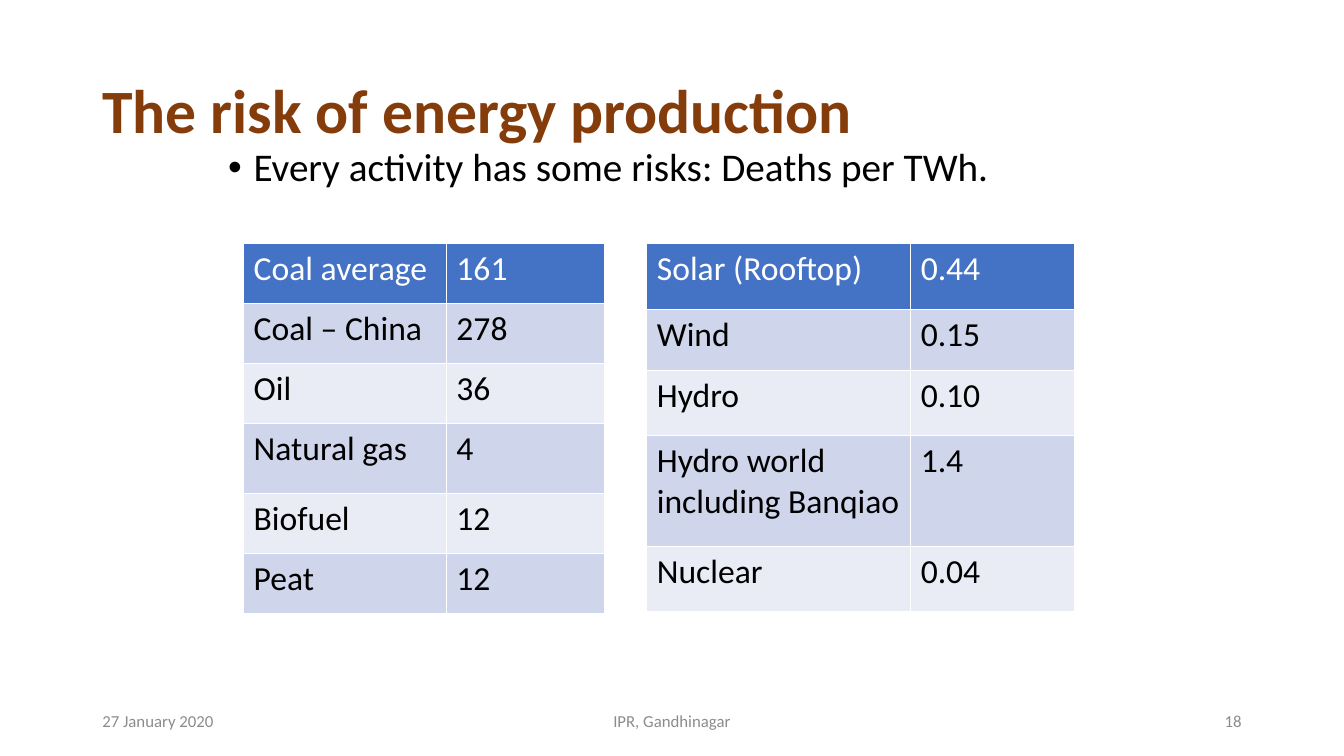
from dataclasses import dataclass

from lxml import etree
from pptx import Presentation
from pptx.dml.color import RGBColor
from pptx.enum.text import MSO_ANCHOR, PP_ALIGN
from pptx.oxml.ns import qn
from pptx.slide import Slide
from pptx.table import _Cell
from pptx.text.text import TextFrame, _Paragraph
from pptx.util import Cm, Pt

LEFT, CENTER, RIGHT = PP_ALIGN.LEFT, PP_ALIGN.CENTER, PP_ALIGN.RIGHT
TOP, MIDDLE = MSO_ANCHOR.TOP, MSO_ANCHOR.MIDDLE


@dataclass(frozen=True)
class Theme:
    font: str = "Calibri"
    title: str = "843C0B"
    text: str = "000000"
    footer: str = "8C8C8C"
    header_text: str = "FFFFFF"
    header_fill: str = "4472C4"
    bands: tuple[str, str] = ("CFD5EA", "E9EBF5")
    border: str = "FFFFFF"
    border_pt: float = 1
    title_pt: float = 44
    body_pt: float = 28
    table_pt: float = 24
    footer_pt: float = 12


THEME = Theme()


@dataclass(frozen=True)
class Box:
    """Place on the slide, in centimetres."""
    left: float
    top: float
    width: float
    height: float


@dataclass(frozen=True)
class FooterItem:
    text: str
    left: float
    width: float
    align: PP_ALIGN


@dataclass(frozen=True)
class RiskTable:
    left: float
    column_widths: tuple[float, ...]
    row_heights: tuple[float, ...]
    rows: tuple[tuple[str, str], ...]


TITLE_BOX = Box(2.33, 1.02, 29.21, 3.68)
BODY_BOX = Box(5.5, 3.6, 22.86, 13.41)
FOOTER_TOP, FOOTER_HEIGHT = 17.65, 1.01
TABLE_TOP = 6.14

FOOTER = (
    FooterItem("27 January 2020", 2.33, 7.62, LEFT),
    FooterItem("IPR, Gandhinagar", 11.22, 11.43, CENTER),
    FooterItem("18", 23.92, 7.62, RIGHT),
)

FUELS = RiskTable(
    6.14, (5.11, 3.99), (1.51, 1.51, 1.51, 1.77, 1.51, 1.51),
    (("Coal average", "161"), ("Coal – China", "278"), ("Oil", "36"),
     ("Natural gas", "4"), ("Biofuel", "12"), ("Peat", "12")),
)
LOW_CARBON = RiskTable(
    16.3, (6.65, 4.14), (1.65, 1.54, 1.65, 2.79, 1.65),
    (("Solar (Rooftop)", "0.44"), ("Wind", "0.15"), ("Hydro", "0.10"),
     ("Hydro world including Banqiao", "1.4"), ("Nuclear", "0.04")),
)


def write(frame: TextFrame, text: str, *, size: float, color: str,
          bold: bool = False, align: PP_ALIGN = LEFT,
          line_spacing: float = 1.0, space_before: float = 0) -> _Paragraph:
    """Put one formatted paragraph into a text frame."""
    paragraph = frame.paragraphs[0]
    paragraph.alignment = align
    paragraph.line_spacing = line_spacing
    paragraph.space_before = Pt(space_before)
    run = paragraph.add_run()
    run.text = text
    run.font.name = THEME.font
    run.font.size = Pt(size)
    run.font.bold = bold
    run.font.color.rgb = RGBColor.from_string(color)
    return paragraph


def add_frame(slide: Slide, box: Box, anchor: MSO_ANCHOR) -> TextFrame:
    frame = slide.shapes.add_textbox(
        Cm(box.left), Cm(box.top), Cm(box.width), Cm(box.height)).text_frame
    frame.word_wrap = True
    frame.vertical_anchor = anchor
    return frame


def add_bullet(paragraph: _Paragraph, indent: float) -> None:
    properties = paragraph._p.get_or_add_pPr()
    properties.set("marL", str(Cm(indent)))
    properties.set("indent", str(-Cm(indent)))
    etree.SubElement(properties, qn("a:buFont")).set("typeface", "Arial")
    etree.SubElement(properties, qn("a:buChar")).set("char", "•")


def add_borders(cell: _Cell) -> None:
    properties = cell._tc.get_or_add_tcPr()
    for side in ("a:lnL", "a:lnR", "a:lnT", "a:lnB"):
        line = etree.SubElement(properties, qn(side), w=str(Pt(THEME.border_pt)))
        fill = etree.SubElement(line, qn("a:solidFill"))
        etree.SubElement(fill, qn("a:srgbClr")).set("val", THEME.border)


def add_risk_table(slide: Slide, risks: RiskTable) -> None:
    table = slide.shapes.add_table(
        len(risks.rows), len(risks.column_widths),
        Cm(risks.left), Cm(TABLE_TOP),
        Cm(sum(risks.column_widths)), Cm(sum(risks.row_heights))).table
    for column, width in zip(table.columns, risks.column_widths):
        column.width = Cm(width)
    for index, (row, height, texts) in enumerate(
            zip(table.rows, risks.row_heights, risks.rows)):
        row.height = Cm(height)
        is_header = index == 0
        fill = THEME.header_fill if is_header else THEME.bands[(index - 1) % 2]
        color = THEME.header_text if is_header else THEME.text
        for cell, text in zip(row.cells, texts):
            add_borders(cell)
            cell.fill.solid()
            cell.fill.fore_color.rgb = RGBColor.from_string(fill)
            write(cell.text_frame, text, size=THEME.table_pt, color=color)


def main() -> None:
    deck = Presentation()
    deck.slide_width, deck.slide_height = Cm(33.87), Cm(19.05)
    slide = deck.slides.add_slide(deck.slide_layouts[6])

    # Title and lead sentence
    write(add_frame(slide, TITLE_BOX, MIDDLE), "The risk of energy production",
          size=THEME.title_pt, color=THEME.title, bold=True, line_spacing=0.9)
    lead = write(add_frame(slide, BODY_BOX, TOP),
                 "Every activity has some risks: Deaths per TWh.",
                 size=THEME.body_pt, color=THEME.text,
                 line_spacing=0.9, space_before=10)
    add_bullet(lead, 0.64)

    # Footer: date, place, slide number
    for item in FOOTER:
        box = Box(item.left, FOOTER_TOP, item.width, FOOTER_HEIGHT)
        write(add_frame(slide, box, MIDDLE), item.text, size=THEME.footer_pt,
              color=THEME.footer, align=item.align)

    # Deaths per TWh by energy source
    for risks in (FUELS, LOW_CARBON):
        add_risk_table(slide, risks)

    deck.save("out.pptx")


if __name__ == "__main__":
    main()
